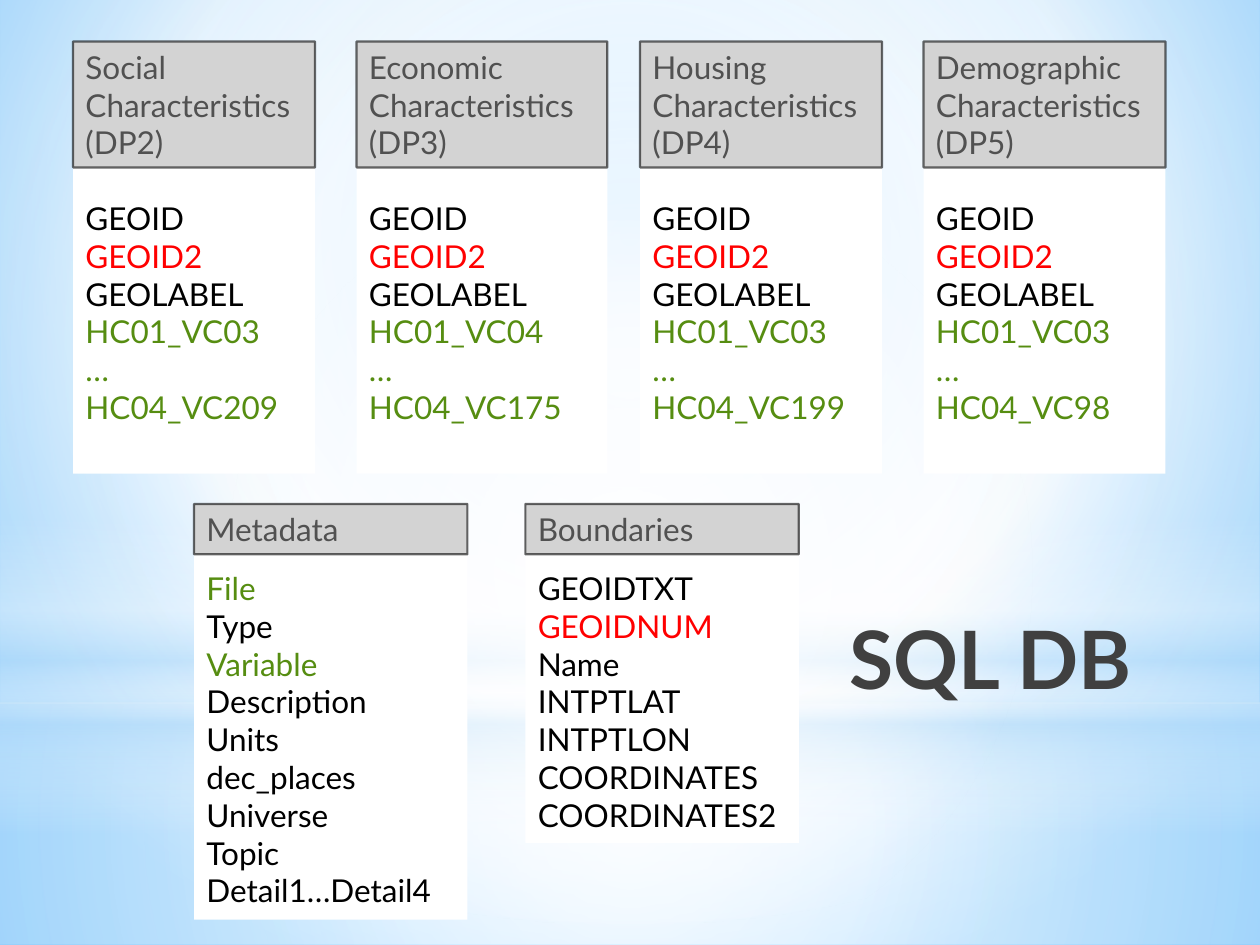
from lxml import etree
from pptx import Presentation
from pptx.dml.color import RGBColor
from pptx.enum.shapes import MSO_SHAPE
from pptx.enum.text import MSO_ANCHOR, MSO_AUTO_SIZE, PP_ALIGN
from pptx.oxml.ns import qn
from pptx.util import Inches, Pt

RECT, OVAL = MSO_SHAPE.RECTANGLE, MSO_SHAPE.OVAL
TOP, LEFT, RIGHT = MSO_ANCHOR.TOP, PP_ALIGN.LEFT, PP_ALIGN.RIGHT
NO_AUTOFIT = MSO_AUTO_SIZE.NONE
WIDTH, HEIGHT = 10, 7.5
FONT = "Lato"
BLACK, WHITE, GREY, DARK = "000000", "FFFFFF", "A6A6A6", "404040"
KEY, LINKED, SKY = "FF0000", "568D11", "B4DCFA"
CENTRE = (50, 50, 50, 50)


def rgb(value):
    return RGBColor.from_string(value)


def set_alpha(color_element, percent):
    etree.SubElement(color_element, qn("a:alpha"), val=str(percent * 1000))


def paint_gradient(fill, owner, stops, focus=None):
    """Stops are (position, colour, opacity); without a focus the gradient runs down."""
    fill.gradient()
    gradient = next(owner.iter(qn("a:gradFill")))
    for child in list(gradient):
        gradient.remove(child)
    stop_list = etree.SubElement(gradient, qn("a:gsLst"))
    for position, color, opacity in stops:
        stop = etree.SubElement(stop_list, qn("a:gs"), pos=str(position * 1000))
        set_alpha(etree.SubElement(stop, qn("a:srgbClr"), val=color), opacity)
    if focus:
        circle = etree.SubElement(gradient, qn("a:path"), {"path": "circle"})
        sides = {side: str(share * 1000) for side, share in zip("ltrb", focus)}
        etree.SubElement(circle, qn("a:fillToRect"), sides)
    else:
        etree.SubElement(gradient, qn("a:lin"), ang="5400000", scaled="0")


def add_block(shapes, kind, box):
    block = shapes.add_shape(kind, *(Inches(length) for length in box))
    block.shadow.inherit = False
    block.line.fill.background()
    return block


def add_backdrop(slide):
    paint_gradient(slide.background.fill, slide.element,
                   [(0, "9ED5FF", 100), (60, WHITE, 100), (100, "5BB9FF", 100)],
                   (20, 10, 20, 60))
    horizon = 5.58
    layers = [
        (RECT, (0, horizon, WIDTH, HEIGHT - horizon),
         [(0, WHITE, 91), (37, WHITE, 76), (100, SKY, 79)], CENTRE),
        (RECT, (0, 0, WIDTH, horizon),
         [(0, WHITE, 89), (48, WHITE, 62), (100, SKY, 79)], CENTRE),
        (RECT, (0, 4.12, WIDTH, 2.5),
         [(0, WHITE, 0), (29, WHITE, 30), (45, SKY, 40),
          (55, WHITE, 26), (65, SKY, 60), (100, WHITE, 0)], None),
        (OVAL, (0, 1.75, WIDTH, horizon),
         [(0, WHITE, 100), (56, WHITE, 0)], CENTRE),
    ]
    for kind, box, stops, focus in layers:
        layer = add_block(slide.shapes, kind, box)
        paint_gradient(layer.fill, layer.element, stops, focus)


def place_title(slide, text, box):
    title = slide.shapes.title
    title.element.getparent().append(title.element)  # in front of the backdrop
    title.left, title.top, title.width, title.height = map(Inches, box)
    frame = title.text_frame
    frame.text = text
    frame.vertical_anchor, frame.auto_size = TOP, NO_AUTOFIT
    heading = frame.paragraphs[0]
    heading.alignment = RIGHT
    heading.font.name, heading.font.size, heading.font.bold = FONT, Pt(46), True
    heading.font.color.rgb = rgb(DARK)


def add_table_card(slide, box, header_height, gap, name, fields):
    """A database table: its name under a translucent header, then its fields."""
    left, top, width, _ = box
    card = slide.shapes.add_group_shape().shapes
    body = add_block(card, RECT, box)
    body.fill.solid()
    body.fill.fore_color.rgb = rgb(WHITE)
    frame = body.text_frame
    frame.word_wrap, frame.vertical_anchor = True, TOP
    lines = [(name, BLACK)] + fields
    frame.text = "\n".join(text for text, _ in lines)
    for paragraph, (_, color) in zip(frame.paragraphs, lines):
        paragraph.alignment = LEFT
        paragraph.font.name, paragraph.font.size = FONT, Pt(18)
        paragraph.font.color.rgb = rgb(color)
    frame.paragraphs[0].space_after = Pt(gap)

    header = add_block(card, RECT, (left, top, width, header_height))
    header.fill.solid()
    header.fill.fore_color.rgb = rgb(GREY)
    header.line.color.rgb = rgb(BLACK)
    header.line.width = Pt(1.25)
    fill_color, line_color = header.element.spPr.iter(qn("a:srgbClr"))
    set_alpha(fill_color, 49)
    set_alpha(line_color, 59)


def add_profile_cards(slide, left, top, pitch):
    profiles = [
        ("Social", 1.92, "HC01_VC03", "HC04_VC209"),
        ("Economic", 1.99, "HC01_VC04", "HC04_VC175"),
        ("Housing", 1.92, "HC01_VC03", "HC04_VC199"),
        ("Demographic", 1.92, "HC01_VC03", "HC04_VC98"),
    ]
    for column, (topic, width, first, last) in enumerate(profiles):
        fields = [("GEOID", BLACK), ("GEOID2", KEY), ("GEOLABEL", BLACK),
                  (first, LINKED), ("…", LINKED), (last, LINKED)]
        add_table_card(slide, (left + column * pitch, top, width, 3.43), 1, 21.6,
                       f"{topic} Characteristics (DP{column + 2})", fields)


def add_lookup_cards(slide, left, top, pitch):
    lookups = [
        ("Metadata", 3.3, ["File", "Type", "Variable", "Description", "Units",
                           "dec_places", "Universe", "Topic", "Detail1…Detail4"]),
        ("Boundaries", 2.69, ["GEOIDTXT", "GEOIDNUM", "Name", "INTPTLAT",
                              "INTPTLON", "COORDINATES", "COORDINATES2"]),
    ]
    accents = {"File": LINKED, "Variable": LINKED, "GEOIDNUM": KEY}
    for column, (name, height, fields) in enumerate(lookups):
        add_table_card(slide, (left + column * pitch, top, 2.17, height), 0.4, 12,
                       name, [(field, accents.get(field, BLACK)) for field in fields])


def main():
    deck = Presentation()
    deck.slide_width, deck.slide_height = Inches(WIDTH), Inches(HEIGHT)
    slide = deck.slides.add_slide(deck.slide_layouts.get_by_name("Title Only"))
    add_backdrop(slide)
    place_title(slide, "SQL DB", (1.96, 4.78, 7.12, 1.25))
    add_profile_cards(slide, left=0.58, top=0.33, pitch=2.25)
    add_lookup_cards(slide, left=1.54, top=4, pitch=2.63)
    deck.save("out.pptx")


if __name__ == "__main__":
    main()
